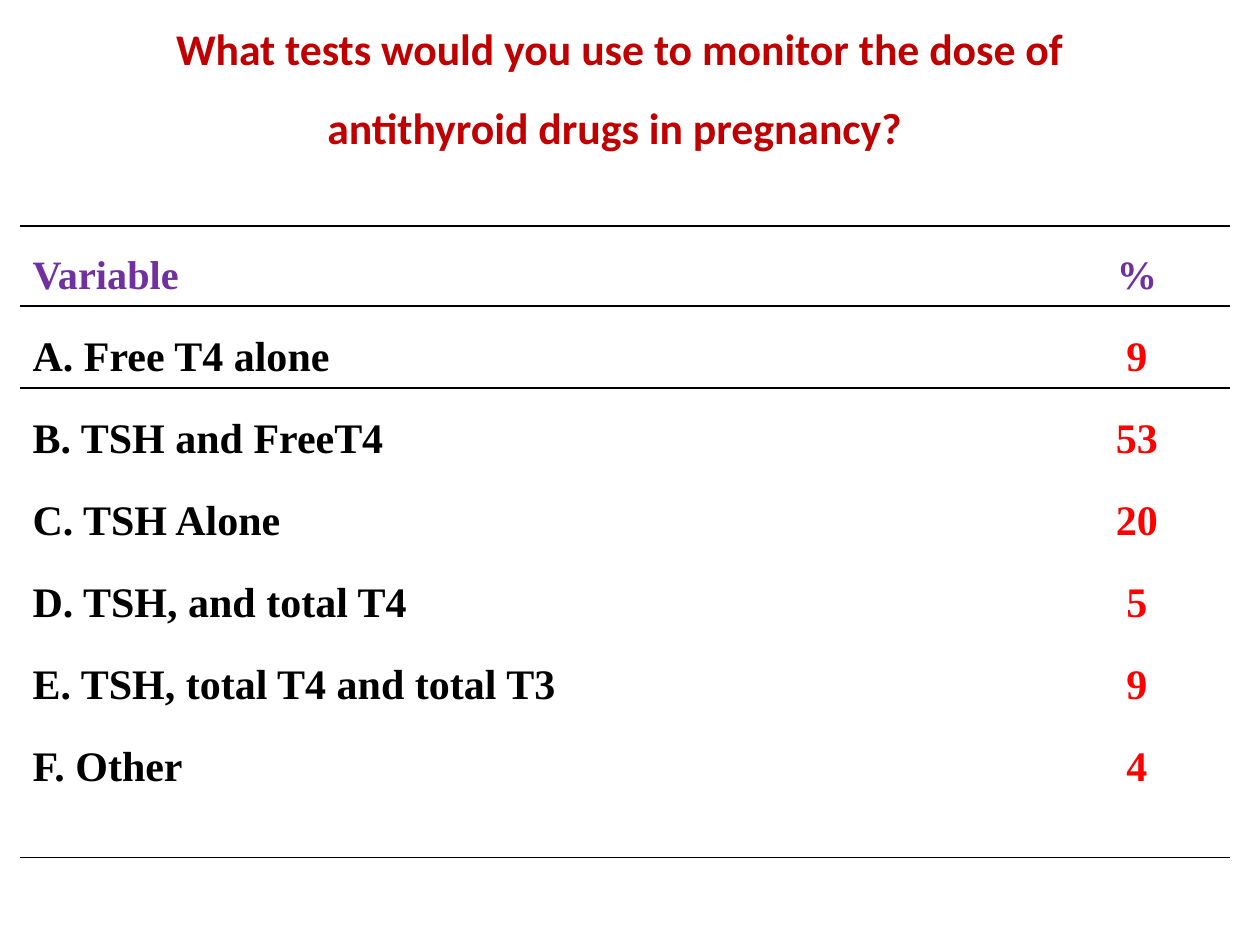
from lxml import etree
from pptx import Presentation
from pptx.dml.color import RGBColor
from pptx.enum.text import MSO_ANCHOR, PP_ALIGN
from pptx.oxml.ns import qn
from pptx.util import Pt

PX = 914400 // 126
CENTER, LEFT = PP_ALIGN.CENTER, PP_ALIGN.LEFT
MIDDLE = MSO_ANCHOR.MIDDLE
RED = RGBColor(0xFF, 0, 0)
DARK_RED = RGBColor(0xC0, 0, 0)
PURPLE = RGBColor(0x70, 0x30, 0xA0)
BLACK = RGBColor(0, 0, 0)

QUESTION = ("What tests would you use to monitor the dose of "
            "antithyroid drugs in pregnancy? ")
ANSWERS = [
    ("Variable", "%"),
    ("A. Free T4 alone", "9"),
    ("B. TSH and FreeT4", "53"),
    ("C. TSH Alone", "20"),
    ("D. TSH, and total T4", "5"),
    ("E. TSH, total T4 and total T3", "9"),
    ("F. Other", "4"),
]
COLUMN_WIDTHS = [1024, 186]
ROW_HEIGHTS = [80] + [82] * 5 + [142]
RULED_EDGES = {0, 1, 2, len(ANSWERS)}


def emu(*lengths):
    return [length * PX for length in lengths]


def write(frame, text, align, size, name, color):
    para = frame.paragraphs[0]
    para.alignment = align
    para.line_spacing = 1.5
    span = para.add_run()
    span.text = text
    for key, value in {"size": Pt(size), "name": name, "bold": True}.items():
        setattr(span.font, key, value)
    span.font.color.rgb = color


def set_borders(cell, top, bottom):
    props = cell._tc.get_or_add_tcPr()
    sides = {"a:lnL": False, "a:lnR": False, "a:lnT": top, "a:lnB": bottom}
    for index, (tag, ruled) in enumerate(sides.items()):
        line = etree.Element(qn(tag), w=str(Pt(1)))
        if ruled:
            fill = etree.SubElement(line, qn("a:solidFill"))
            etree.SubElement(fill, qn("a:srgbClr"), val=str(BLACK))
        else:
            etree.SubElement(line, qn("a:noFill"))
        props.insert(index, line)


def add_title(page, left, top, width, height):
    box = page.shapes.add_textbox(*emu(left, top, width, height))
    frame = box.text_frame
    frame.word_wrap = True
    frame.vertical_anchor = MIDDLE
    write(frame, QUESTION, CENTER, 25, "Calibri", DARK_RED)


def add_answers(page, left, top):
    size = sum(COLUMN_WIDTHS), sum(ROW_HEIGHTS)
    table = page.shapes.add_table(len(ANSWERS), len(COLUMN_WIDTHS),
                                  *emu(left, top, *size)).table
    table.first_row = table.horz_banding = False
    for column, width in zip(table.columns, emu(*COLUMN_WIDTHS)):
        column.width = width
    for row, height in zip(table.rows, emu(*ROW_HEIGHTS)):
        row.height = height
    for row, texts in enumerate(ANSWERS):
        colors = (BLACK, RED) if row else (PURPLE, PURPLE)
        font_size = 24 if row else 23
        for column, (text, color) in enumerate(zip(texts, colors)):
            cell = table.cell(row, column)
            cell.margin_top = cell.margin_bottom = 5 * PX
            cell.fill.background()
            set_borders(cell, row in RULED_EDGES, row + 1 in RULED_EDGES)
            write(cell.text_frame, text, CENTER if column else LEFT,
                  font_size, "Times New Roman", color)


def main():
    deck = Presentation()
    deck.slide_width, deck.slide_height = emu(1260, 945)
    page = deck.slides.add_slide(deck.slide_layouts[6])
    add_answers(page, 20, 226)
    add_title(page, 84, 21, 1071, 107)
    deck.save("out.pptx")


if __name__ == "__main__":
    main()
